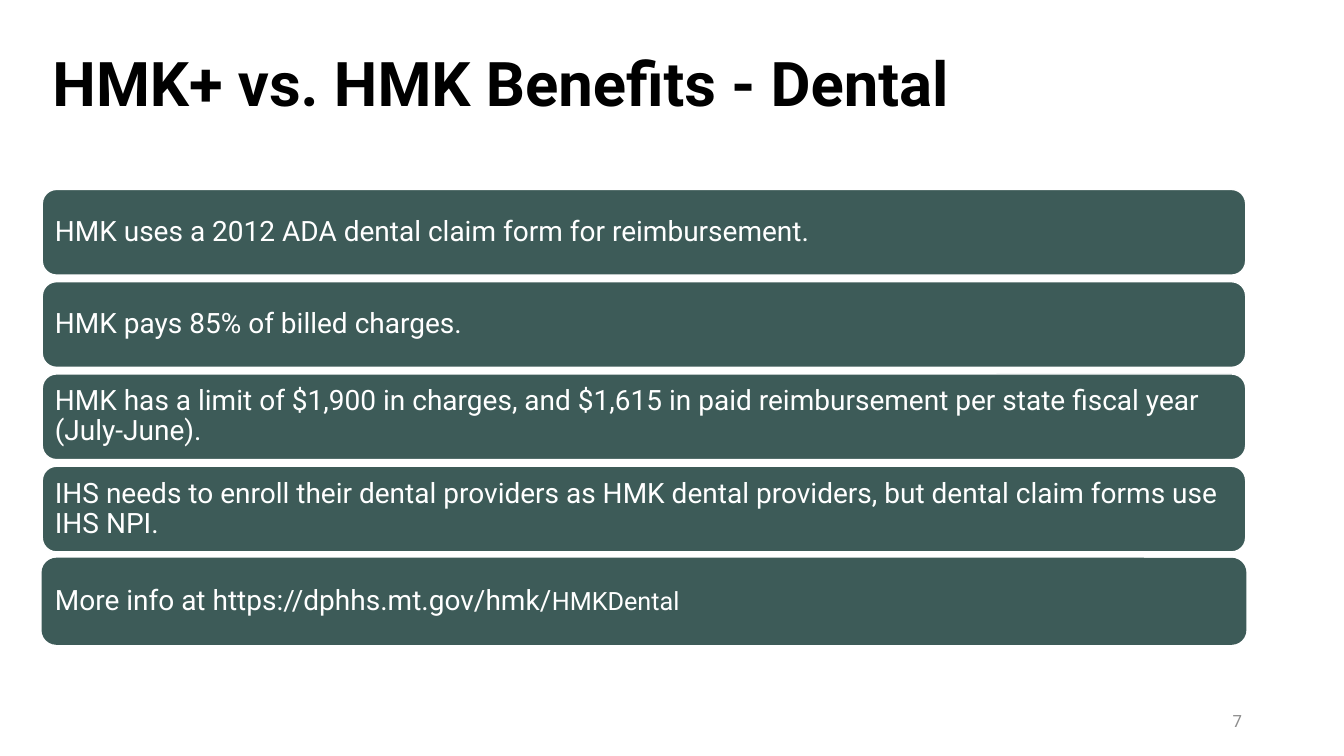
from pptx import Presentation
from pptx.dml.color import RGBColor
from pptx.enum.shapes import MSO_SHAPE
from pptx.enum.text import MSO_ANCHOR, PP_ALIGN
from pptx.util import Pt

ROUNDED = MSO_SHAPE.ROUNDED_RECTANGLE
MIDDLE = MSO_ANCHOR.MIDDLE
LEFT, RIGHT = PP_ALIGN.LEFT, PP_ALIGN.RIGHT
GREEN, WHITE = "3D5B58", "FFFFFF"


def rgb(value):
    return RGBColor.from_string(value)


def write(sp, pieces, color, align=LEFT, bold=False, spacing=0.9):
    tf = sp.text_frame
    tf.word_wrap = True
    tf.vertical_anchor = MIDDLE
    p = tf.paragraphs[0]
    p.alignment = align
    p.line_spacing = spacing
    for text, size in pieces:
        r = p.add_run()
        r.text = text
        r.font.name = "Roboto"
        r.font.size = Pt(size)
        r.font.bold = bold
        r.font.color.rgb = rgb(color)


prs = Presentation()
prs.slide_width, prs.slide_height = Pt(960), Pt(540)
s = prs.slides.add_slide(prs.slide_layouts[6])

title = s.shapes.add_textbox(Pt(30.4), Pt(9.4), Pt(826), Pt(104.4))
write(title, [("HMK+ vs. HMK Benefits - Dental", 44)], "000000", bold=True)

benefits = [
    ([("HMK uses a 2012 ADA dental claim form for reimbursement.", 20)], WHITE),
    ([("HMK pays 85% of billed charges.", 20)], WHITE),
    ([("HMK has a limit of $1,900 in charges, and $1,615 in paid reimbursement "
       "per state fiscal year (July-June).", 20)], WHITE),
    ([("IHS needs to enroll their dental providers as HMK dental providers, "
       "but dental claim forms use IHS NPI.", 20)], WHITE),
    ([("More info at https://dphhs.mt.gov/hmk/", 20), ("HMKDental", 18)], GREEN),
]
for i, (pieces, outline) in enumerate(benefits):
    sp = s.shapes.add_shape(ROUNDED, Pt(30.2), Pt(135.3 + 65.9 * i), Pt(859.6), Pt(61.2))
    sp.shadow.inherit = False
    sp.fill.solid()
    sp.fill.fore_color.rgb = rgb(GREEN)
    sp.line.color.rgb = rgb(outline)
    sp.line.width = Pt(1)
    tf = sp.text_frame
    tf.margin_left = tf.margin_top = tf.margin_right = tf.margin_bottom = Pt(6)
    write(sp, pieces, WHITE)

number = s.shapes.add_textbox(Pt(410.4), Pt(504), Pt(483.8), Pt(21.6))
write(number, [("7", 12)], "8C8C8C", align=RIGHT, spacing=1.0)

prs.save("out.pptx")
